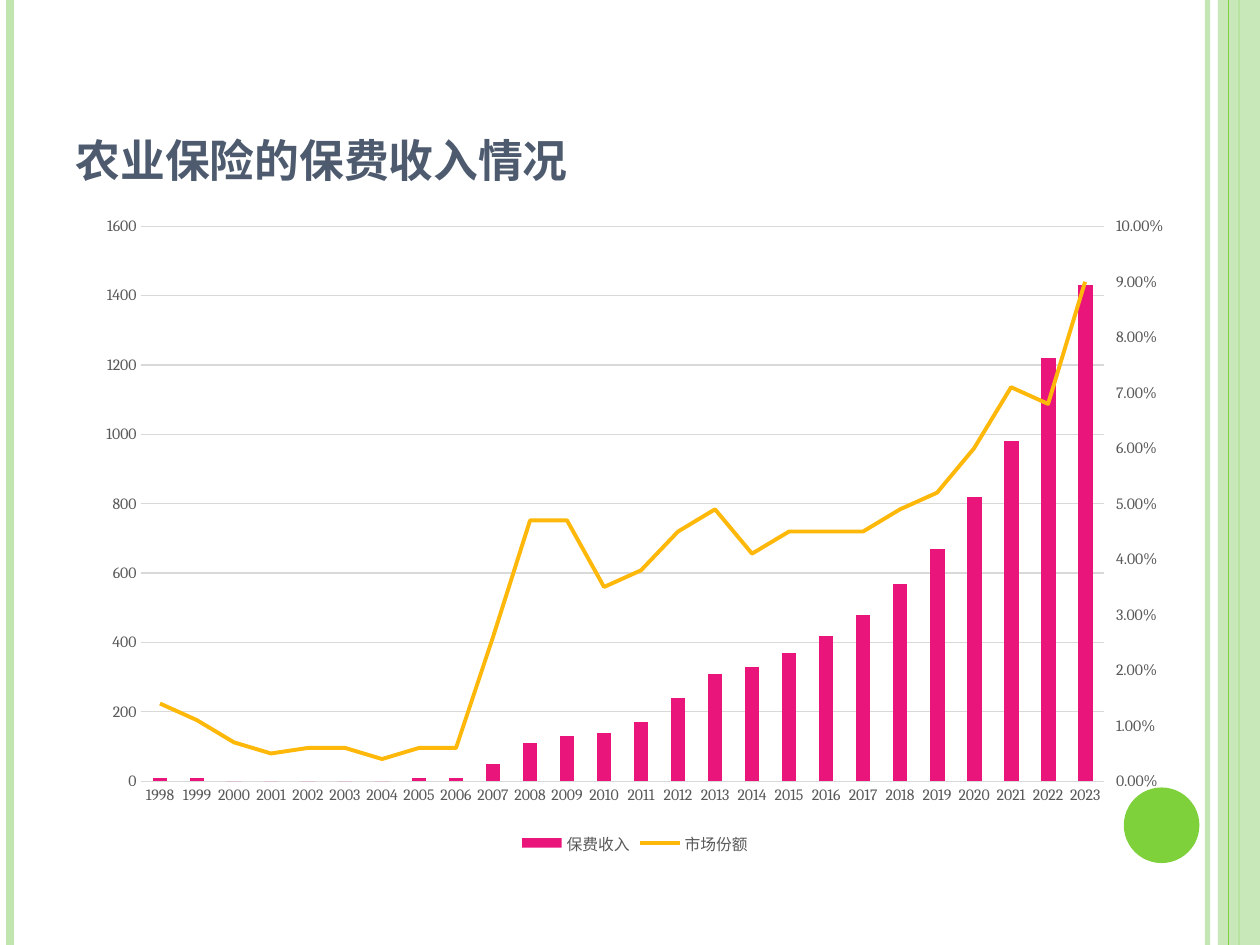
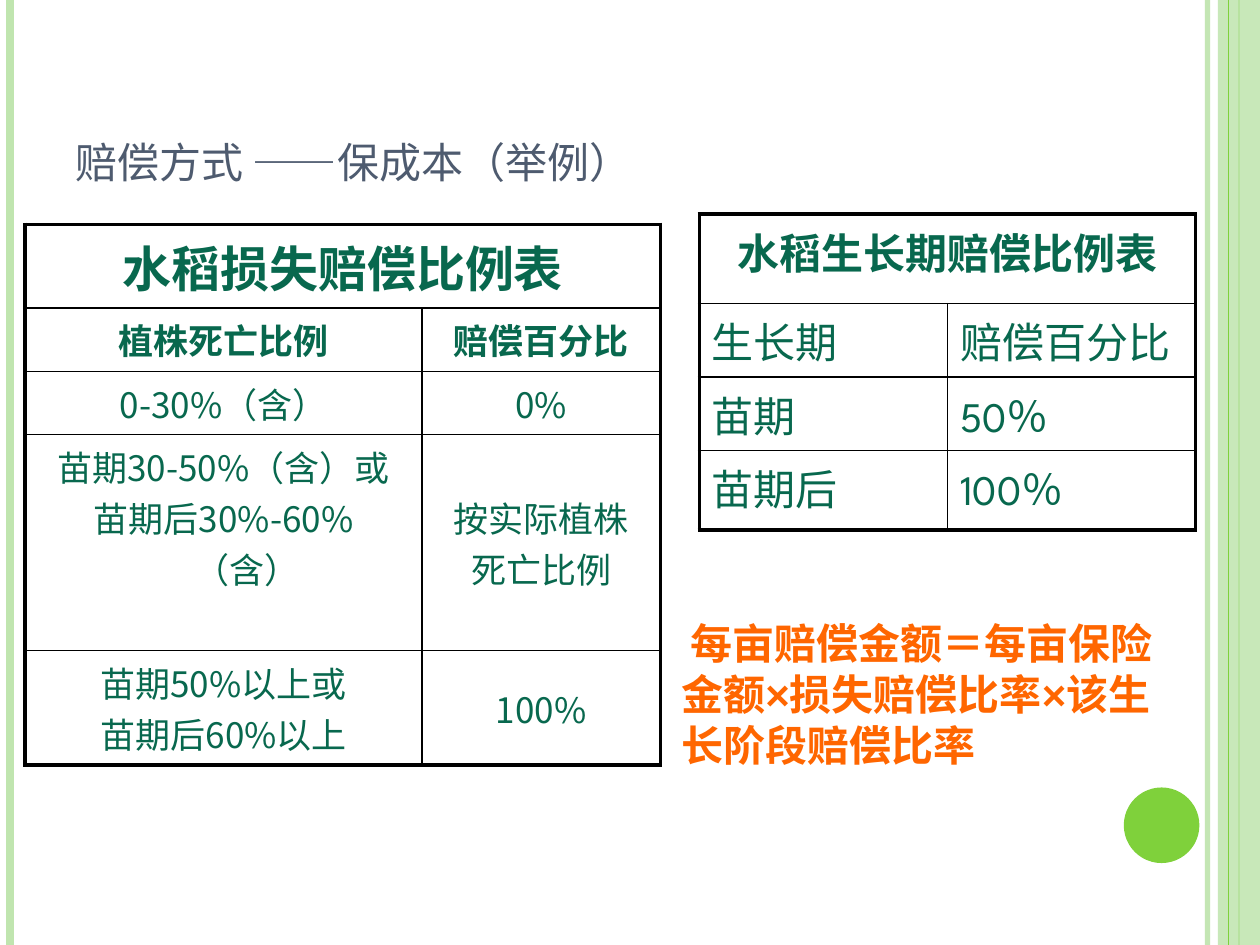
"""Build two slides on crop insurance: premium income and compensation ratios."""
from lxml.etree import SubElement
from pptx import Presentation
from pptx.chart.data import CategoryChartData
from pptx.dml.color import RGBColor
from pptx.enum.chart import XL_CHART_TYPE, XL_LEGEND_POSITION, XL_MARKER_STYLE, XL_TICK_MARK
from pptx.enum.shapes import MSO_CONNECTOR, MSO_SHAPE
from pptx.enum.text import MSO_ANCHOR, MSO_AUTO_SIZE, PP_ALIGN
from pptx.oxml import parse_xml
from pptx.oxml.ns import nsdecls, qn
from pptx.util import Pt

GREEN, PALE, SLATE, TEAL = "7FD13B", "C0E5AF", "4E5B6F", "08684E"
PINK, AMBER, ORANGE, GRID, GREY = "EA157A", "FEB80A", "FF6600", "D9D9D9", "595959"
CJK = "Noto Sans CJK SC"


def paint(fill, color):
    fill.solid()
    fill.fore_color.rgb = RGBColor.from_string(color)


def write(p, text, color, **fmt):
    r = p.add_run()
    r.text = text
    paint(r.font.fill, color)
    for key, value in fmt.items():
        setattr(r.font, key, value)
    rPr = r._r.get_or_add_rPr()
    SubElement(rPr, qn("a:ea"), typeface=CJK)
    return rPr


prs = Presentation()
prs.slide_width, prs.slide_height = Pt(720), Pt(540)
layout = prs.slide_layouts[5]
box = {"left": 36, "top": 21.6, "width": 588, "height": 90}
for key, value in box.items():
    setattr(layout.placeholders[0], key, Pt(value))

titles = [
    ("农业保险的保费收入情况", {"size": Pt(32), "name": "Times New Roman", "bold": True}),
    ("赔偿方式 ——保成本（举例）", {"size": Pt(30), "name": "Cambria", "bold": False}),
]
slides = []
for text, fmt in titles:
    s = prs.slides.add_slide(layout)
    tf = s.shapes.title.text_frame
    tf.auto_size = MSO_AUTO_SIZE.NONE
    tf.vertical_anchor = MSO_ANCHOR.BOTTOM
    p = tf.paragraphs[0]
    p.alignment = PP_ALIGN.LEFT
    write(p, text, SLATE, **fmt).set("cap", "small")
    slides.append(s)
income, ratios = slides

decor = [
    ("line", 690, PALE, 3, 93), ("line", 5.9, PALE, 4.5, 100),
    ("line", 708, GREEN, 1.5, 100), ("band", 696, PALE, 24, 87),
    ("line", 702, GREEN, 0.75, 100), ("dot", 642.2, GREEN, 43.2, 100),
]
for n, (kind, x, color, size, alpha) in enumerate(decor):
    if kind == "line":
        sp = income.shapes.add_connector(MSO_CONNECTOR.STRAIGHT, Pt(x), 0, Pt(x), Pt(540))
        sp.line.width = Pt(size)
        paint(sp.line.fill, color)
        SubElement(sp.element.spPr, qn("a:effectLst"))
    else:
        preset, y, h = (MSO_SHAPE.RECTANGLE, 0, 540) if kind == "band" else (MSO_SHAPE.OVAL, 450, size)
        sp = income.shapes.add_shape(preset, Pt(x), Pt(y), Pt(size), Pt(h))
        sp.shadow.inherit = False
        sp.line.fill.background()
        paint(sp.fill, color)
    if alpha < 100:
        clr = next(sp.element.spPr.iter(qn("a:srgbClr")))
        SubElement(clr, qn("a:alpha"), val=str(alpha * 1000))
    sp.element[0][0].set("id", str(20 + n))
    layout.shapes.element.append(sp.element)

data = CategoryChartData()
data.categories = [str(year) for year in range(1998, 2024)]
data.add_series("保费收入", [
    10, 10, 0, 0, 0, 0, 0, 10, 10, 50, 110, 130, 140, 170, 240, 310, 330, 370,
    420, 480, 570, 670, 820, 980, 1220, 1430])
data.add_series("市场份额", [
    0.014, 0.011, 0.007, 0.005, 0.006, 0.006, 0.004, 0.006, 0.006, 0.026, 0.047,
    0.047, 0.035, 0.038, 0.045, 0.049, 0.041, 0.045, 0.045, 0.045, 0.049, 0.052,
    0.06, 0.071, 0.068, 0.09], "0.00%")
chart = income.shapes.add_chart(
    XL_CHART_TYPE.COLUMN_CLUSTERED, Pt(48.2), Pt(116.6), Pt(629.3), Pt(374.4), data).chart
chart.has_title = False
chart.font.size, chart.font.name = Pt(9), "Cambria"
paint(chart.font.fill, GREY)
chart.has_legend = True
chart.legend.position = XL_LEGEND_POSITION.BOTTOM
chart.legend.include_in_layout = False

cat, val = chart.category_axis, chart.value_axis
cat.major_tick_mark = val.major_tick_mark = XL_TICK_MARK.NONE
val.minimum_scale, val.maximum_scale, val.major_unit = 0, 1600, 200
val.format.line.fill.background()
for line in (cat.format.line, val.major_gridlines.format.line):
    line.width = Pt(0.75)
    paint(line.fill, GRID)

bars = chart.plots[0]
bars.gap_width = 150
bars.vary_by_categories = False
paint(bars.series[0].format.fill, PINK)

share = bars.series[1].format and bars._element.findall(qn("c:ser"))[1]
for tag in share.findall(qn("c:invertIfNegative")):
    share.remove(tag)
line_xml = parse_xml(
    f'<c:lineChart {nsdecls("c")}><c:grouping val="standard"/><c:varyColors val="0"/>'
    '<c:marker val="1"/><c:axId val="5001"/><c:axId val="5002"/></c:lineChart>')
line_xml.insert(2, share)
bars._element.addnext(line_xml)
right_axes = [
    '<c:valAx {}><c:axId val="5002"/><c:scaling><c:orientation val="minMax"/>'
    '<c:max val="0.1"/><c:min val="0"/></c:scaling><c:delete val="0"/><c:axPos val="r"/>'
    '<c:numFmt formatCode="0.00%" sourceLinked="0"/><c:majorTickMark val="out"/>'
    '<c:minorTickMark val="none"/><c:tickLblPos val="nextTo"/>'
    '<c:spPr><a:ln><a:noFill/></a:ln></c:spPr><c:crossAx val="5001"/>'
    '<c:crosses val="max"/><c:crossBetween val="between"/><c:majorUnit val="0.01"/></c:valAx>',
    '<c:catAx {}><c:axId val="5001"/><c:scaling><c:orientation val="minMax"/></c:scaling>'
    '<c:delete val="1"/><c:axPos val="b"/><c:majorTickMark val="none"/>'
    '<c:minorTickMark val="none"/><c:tickLblPos val="nextTo"/><c:crossAx val="5002"/>'
    '<c:crosses val="autoZero"/></c:catAx>',
]
last = val._element
for xml in right_axes:
    axis = parse_xml(xml.format(nsdecls("c", "a")))
    last.addnext(axis)
    last = axis
share = chart.plots[1].series[0]
share.smooth = False
share.marker.style = XL_MARKER_STYLE.NONE
share.format.line.width = Pt(2.25)
paint(share.format.line.fill, AMBER)

tables = [
    {"at": (399.6, 122.4), "cols": [141.8, 141.8], "heights": [51.1, 39.6, 33.8, 45.4],
     "title": 24, "body": 24, "font": "League Spartan", "bold_rows": 1, "inset": 7.2,
     "centred": False,
     "rows": [["水稻生长期赔偿比例表", ""], ["生长期", "赔偿百分比"],
              ["苗期", "50％"], ["苗期后", "100％"]]},
    {"at": (14.4, 128.2), "cols": [226.8, 136.1], "heights": [45.4, 35.3, 33.8, 62.6, 65.5],
     "title": 28, "body": 20, "font": CJK, "bold_rows": 2, "inset": 13,
     "centred": True,
     "rows": [["水稻损失赔偿比例表", ""], ["植株死亡比例", "赔偿百分比"],
              ["0-30%（含）", "0%"],
              ["苗期30-50%（含）或\n苗期后30%-60%（含）", "按实际植株死亡比例"],
              ["苗期50%以上或\n苗期后60%以上", "100%"]]},
]
for t in tables:
    x, y = t["at"]
    last = len(t["rows"]) - 1
    tbl = ratios.shapes.add_table(last + 1, 2, Pt(x), Pt(y), Pt(sum(t["cols"])),
                                  Pt(sum(t["heights"]))).table
    tbl.first_row = tbl.horz_banding = False
    for col, width in zip(tbl.columns, t["cols"]):
        col.width = Pt(width)
    for i, texts in enumerate(t["rows"]):
        tbl.rows[i].height = Pt(t["heights"][i])
        for j, text in enumerate(texts):
            cell = tbl.cell(i, j)
            cell.fill.background()
            cell.margin_left = cell.margin_right = Pt(t["inset"])
            if t["centred"] and j == 1 and i > 1:
                cell.vertical_anchor = MSO_ANCHOR.MIDDLE
            outer = {"L": j == 0 or i == 0, "R": j == 1 or i == 0, "T": i == 0, "B": i == last}
            tcPr = cell._tc.get_or_add_tcPr()
            for n, (side, thick) in enumerate(outer.items()):
                tcPr.insert(n, parse_xml(
                    f'<a:ln{side} {nsdecls("a")} w="{Pt(2.25 if thick else 1)}"><a:solidFill>'
                    f'<a:srgbClr val="000000"/></a:solidFill></a:ln{side}>'))
            for k, part in enumerate(text.split("\n") if text else []):
                tf = cell.text_frame
                p = tf.add_paragraph() if k else tf.paragraphs[0]
                if t["centred"] or i == 0:
                    p.alignment = PP_ALIGN.CENTER
                    if not part.startswith("按"):
                        pPr = p._p.get_or_add_pPr()
                        pPr.set("marL", str(Pt(27)))
                        pPr.set("indent", str(Pt(-27)))
                write(p, part, TEAL, size=Pt(t["body"] if i else t["title"]),
                      name=t["font"] if i else "League Spartan", bold=i < t["bold_rows"])
    tbl.cell(0, 0).merge(tbl.cell(0, 1))

sp = ratios.shapes.add_textbox(Pt(382.3), Pt(349.2), Pt(294.5), Pt(93.6))
tf = sp.text_frame
tf.word_wrap = True
p = tf.paragraphs[0]
p.line_spacing = Pt(29)
write(p, " 每亩赔偿金额＝每亩保险金额×损失赔偿比率×该生长阶段赔偿比率", ORANGE,
      size=Pt(24), name="Arial", bold=True)

prs.save("out.pptx")
